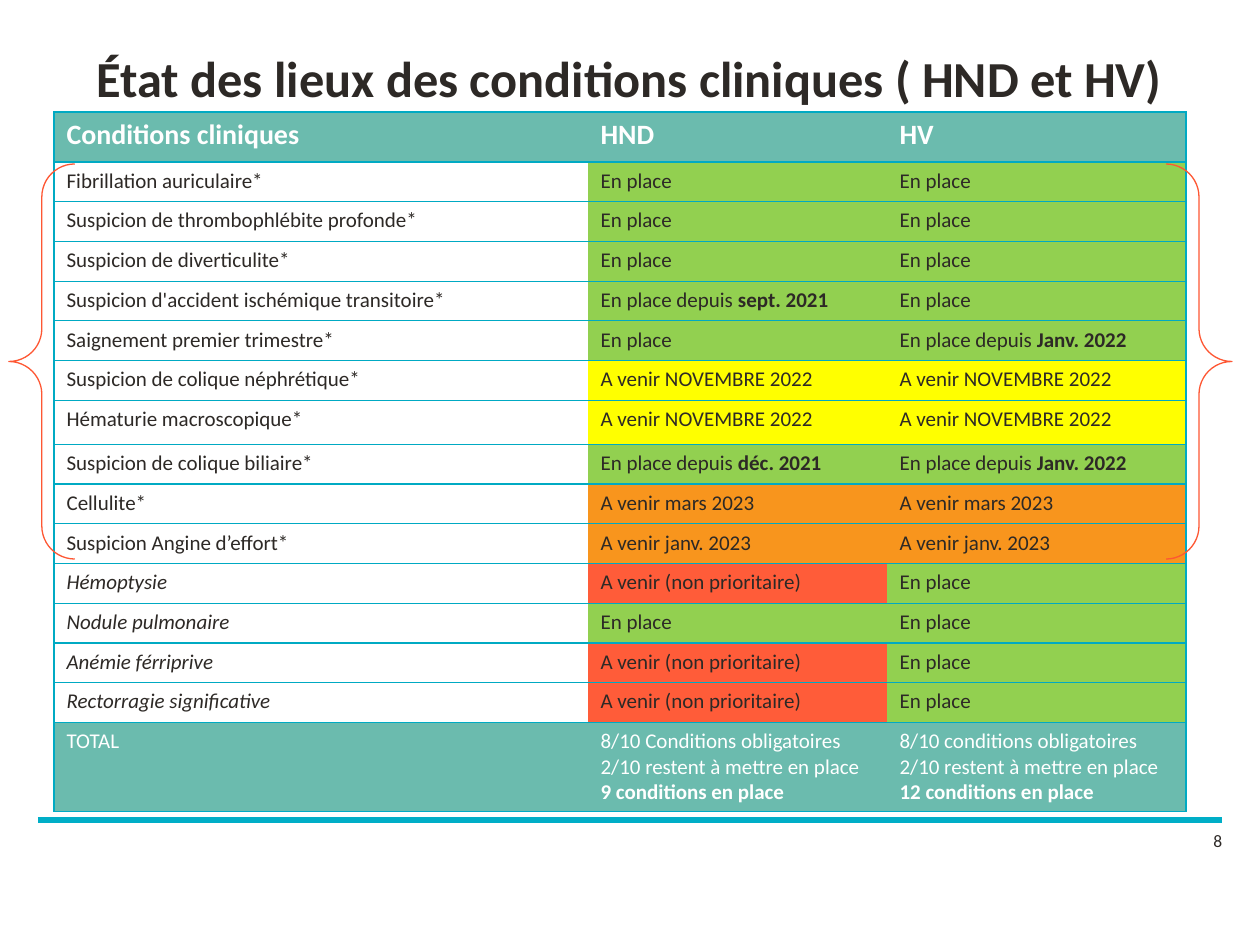
from lxml import etree
from pptx import Presentation
from pptx import util as u
from pptx.dml.color import RGBColor
from pptx.enum import shapes, text
from pptx.oxml import parse_xml
from pptx.oxml.ns import nsdecls, qn

PX = 914400 / 126
HEX = {"ink": "2D2926", "white": "FFFFFF", "teal": "6BBBAE", "edge": "00AAC3",
       "rule": "00AEC7", "brace": "FE5733", "green": "92D050",
       "yellow": "FFFF00", "orange": "F8951D", "red": "FF5C39"}


def px(*nums):
    return [u.Emu(round(n * PX)) for n in nums]


def write(frame, words, size=12, color="ink", bold=False, italic=False):
    """One paragraph per line; a part between bars is bold."""
    for i, line in enumerate(words.split("\n")):
        para = frame.add_paragraph() if i else frame.paragraphs[0]
        para.alignment = text.PP_ALIGN.LEFT
        for j, part in enumerate(line.split("|")):
            if part:
                run = para.add_run()
                run.text = part
                font = run.font
                font.name, font.size = "Calibri", u.Pt(size)
                font.bold, font.italic = bold or j % 2 == 1, italic
                font.color.rgb = RGBColor.from_string(HEX[color])


prs = Presentation()
prs.slide_width, prs.slide_height = u.Inches(10), u.Inches(7.5)
slide = prs.slides.add_slide(prs.slide_layouts[5])

# Footer rule and slide number
rule = slide.shapes.add_connector(shapes.MSO_CONNECTOR.STRAIGHT,
                                  *px(38, 820, 1222, 820))
rule.line.color.rgb = RGBColor.from_string(HEX["rule"])
rule.line.width = u.Pt(3)
etree.SubElement(rule._element.spPr, qn("a:effectLst"))
num = slide.shapes.add_textbox(*px(1201, 824, 59, 50)).text_frame
num.word_wrap = True
write(num, "8", size=10)

# Title
title = slide.shapes.title
title.left, title.top, title.width, title.height = px(84, 38, 1139, 97)
frame = title.text_frame
frame.word_wrap = True
frame.auto_size = text.MSO_AUTO_SIZE.NONE
frame.vertical_anchor = text.MSO_ANCHOR.TOP
frame.margin_top = px(9)[0]
write(frame, "État des lieux des conditions cliniques ( HND et HV)",
      size=28.8, bold=True)

# Table content
ok = "En place"
nov = "A venir NOVEMBRE 2022"
march = "A venir mars 2023"
jan = "A venir janv. 2023"
late = "A venir (non prioritaire)"
since = "En place depuis |Janv. 2022|"
rows = [
    ("Conditions cliniques", "HND", "HV"),
    ("Fibrillation auriculaire*", ok, ok),
    ("Suspicion de thrombophlébite profonde*", ok, ok),
    ("Suspicion de diverticulite*", ok, ok),
    ("Suspicion d'accident ischémique transitoire*",
     "En place depuis |sept. 2021|", ok),
    ("Saignement premier trimestre*", ok, since),
    ("Suspicion de colique néphrétique*", nov, nov),
    ("Hématurie macroscopique*", nov, nov),
    ("Suspicion de colique biliaire*", "En place depuis |déc. 2021|", since),
    ("Cellulite*", march, march),
    ("Suspicion Angine d’effort*", jan, jan),
    ("Hémoptysie", late, ok),
    ("Nodule pulmonaire", ok, ok),
    ("Anémie férriprive", late, ok),
    ("Rectorragie significative", late, ok),
    ("TOTAL",
     "8/10 Conditions obligatoires\n2/10 restent à mettre en place\n"
     "|9 conditions en place|",
     "8/10 conditions obligatoires\n2/10 restent à mettre en place\n"
     "|12 conditions en place|"),
]
fills = {nov: "yellow", march: "orange", jan: "orange", late: "red"}
last = len(rows) - 1

# Table grid: the body rows share one height, but for one taller row
head, tall, foot, full = 50, 44, 89, 700
body = (full - head - tall - foot) / (last - 2)
heights = {0: head, 7: tall, last: foot}
table = slide.shapes.add_table(len(rows), 3, *px(54, 112, 1132, full)).table
table.first_row = table.horz_banding = False
for col, width in zip(table.columns, px(534, 299, 299)):
    col.width = width

# Table cells
for r, row in enumerate(rows):
    table.rows[r].height = px(heights.get(r, body))[0]
    for c, words in enumerate(row):
        cell = table.cell(r, c)
        props = cell._tc.get_or_add_tcPr()
        for side, drawn in (("L", c == 0), ("R", c == 2), ("T", True), ("B", True)):
            paint = (f'<a:solidFill><a:srgbClr val="{HEX["edge"]}"/></a:solidFill>'
                     if drawn else "<a:noFill/>")
            props.append(parse_xml(
                f'<a:ln{side} {nsdecls("a")} w="9525">{paint}</a:ln{side}>'))
        band = r in (0, last)
        if c or band:
            cell.fill.solid()
            name = "teal" if band else fills.get(words, "green")
            cell.fill.fore_color.rgb = RGBColor.from_string(HEX[name])
        else:
            cell.fill.background()
        write(cell.text_frame, words, size=12 if r else 16, bold=r == 0,
              color="white" if band else "ink",
              italic=c == 0 and 10 < r < last)

# Braces around the priority conditions
brace = slide.shapes.add_shape(shapes.MSO_SHAPE.DOUBLE_BRACE,
                               *px(9, 164, 1223, 395))
brace.shadow.inherit = False
brace.fill.background()
brace.line.color.rgb = RGBColor.from_string(HEX["brace"])
brace.line.width = u.Pt(0.75)

prs.save("out.pptx")
